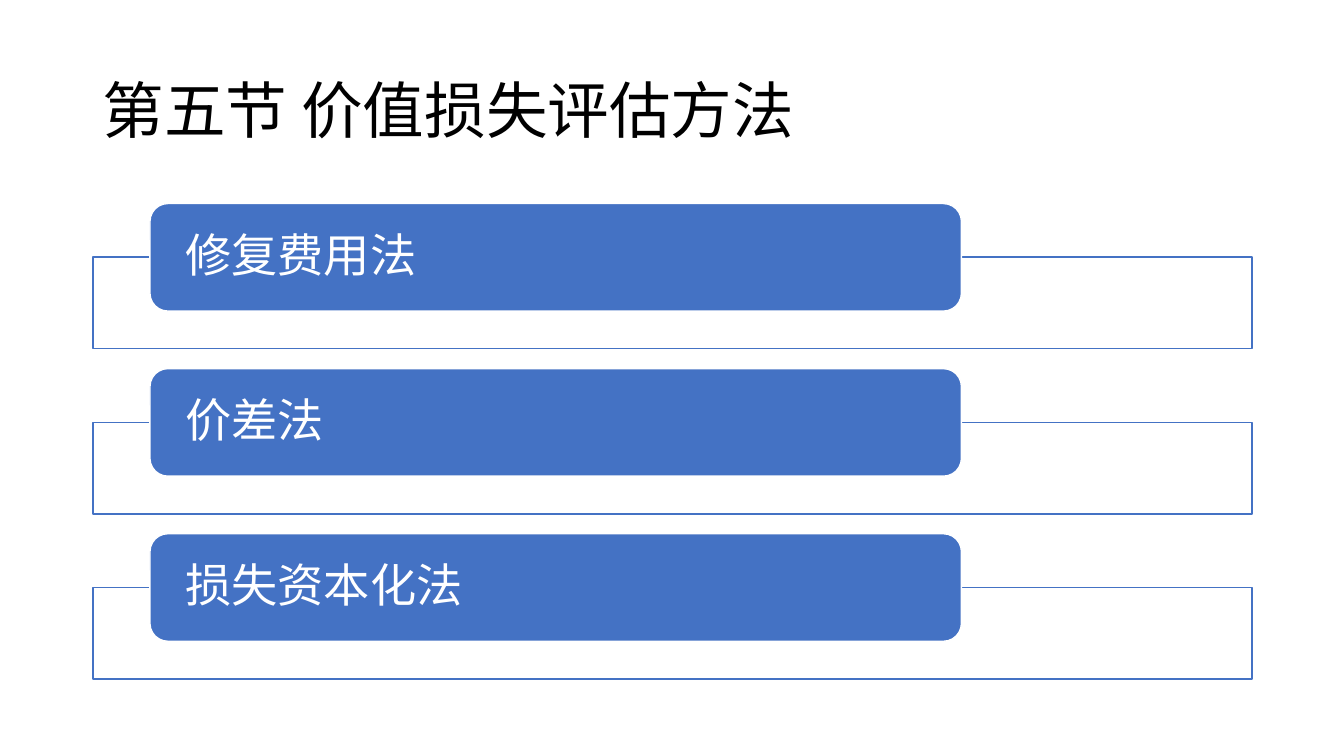
import pptx
import pptx.util
import pptx.dml.color
import pptx.enum.shapes
import pptx.enum.text
import pptx.oxml
import pptx.oxml.ns
from pptx.util import Cm

TITLE = "第五节 价值损失评估方法"
METHODS = ["修复费用法", "价差法", "损失资本化法"]
FONT = "Noto Sans CJK SC"
BLUE, WHITE, BLACK = "4472C4", "FFFFFF", "000000"
LEFT, WIDTH = 2.34, 29.21
FRAME_TOP, FRAME_HEIGHT = 6.48, 2.31
LABEL_LEFT, LABEL_TOP, LABEL_WIDTH, LABEL_HEIGHT = 3.78, 5.13, 20.45, 2.71
PITCH = 4.16


def rgb(value):
    return pptx.dml.color.RGBColor.from_string(value)


def write(shape, wording, size, color, inset):
    frame = shape.text_frame
    frame.word_wrap = True
    frame.vertical_anchor = pptx.enum.text.MSO_ANCHOR.MIDDLE
    frame.margin_left = frame.margin_right = Cm(inset)
    frame.margin_top = frame.margin_bottom = 0
    paragraph = frame.paragraphs[0]
    paragraph.alignment = pptx.enum.text.PP_ALIGN.LEFT
    paragraph.line_spacing = 0.9
    run = paragraph.add_run()
    run.text = wording
    run.font.size = pptx.util.Pt(size)
    run.font.name = FONT
    run.font.color.rgb = rgb(color)
    east_asian = pptx.oxml.parse_xml(
        f'<a:ea {pptx.oxml.ns.nsdecls("a")} typeface="{FONT}"/>')
    run.font._element.find(pptx.oxml.ns.qn("a:latin")).addnext(east_asian)


def add_box(slide, kind, left, top, width, height, fill, line):
    box = slide.shapes.add_shape(kind, Cm(left), Cm(top), Cm(width), Cm(height))
    box.shadow.inherit = False
    box.fill.solid()
    box.fill.fore_color.rgb = rgb(fill)
    box.line.color.rgb = rgb(line)
    box.line.width = pptx.util.Pt(1)
    return box


def main():
    """Build the slide listing the methods of assessing value loss."""
    deck = pptx.Presentation()
    deck.slide_width, deck.slide_height = Cm(33.87), Cm(19.05)
    slide = deck.slides.add_slide(deck.slide_layouts[6])
    title = slide.shapes.add_textbox(Cm(LEFT), Cm(1.01), Cm(WIDTH), Cm(3.68))
    write(title, TITLE, 44, BLACK, 0.25)

    kinds = pptx.enum.shapes.MSO_SHAPE
    for row, method in enumerate(METHODS):
        shift = row * PITCH
        frame = add_box(slide, kinds.RECTANGLE, LEFT, FRAME_TOP + shift,
                        WIDTH, FRAME_HEIGHT, WHITE, BLUE)
        frame_color = frame.fill._xPr.find(".//" + pptx.oxml.ns.qn("a:srgbClr"))
        frame_color.append(pptx.oxml.parse_xml(
            f'<a:alpha {pptx.oxml.ns.nsdecls("a")} val="90000"/>'))
        label = add_box(slide, kinds.ROUNDED_RECTANGLE, LABEL_LEFT,
                        LABEL_TOP + shift, LABEL_WIDTH, LABEL_HEIGHT, BLUE, WHITE)
        write(label, method, 33, WHITE, 0.76)
    deck.save("out.pptx")


if __name__ == "__main__":
    main()
